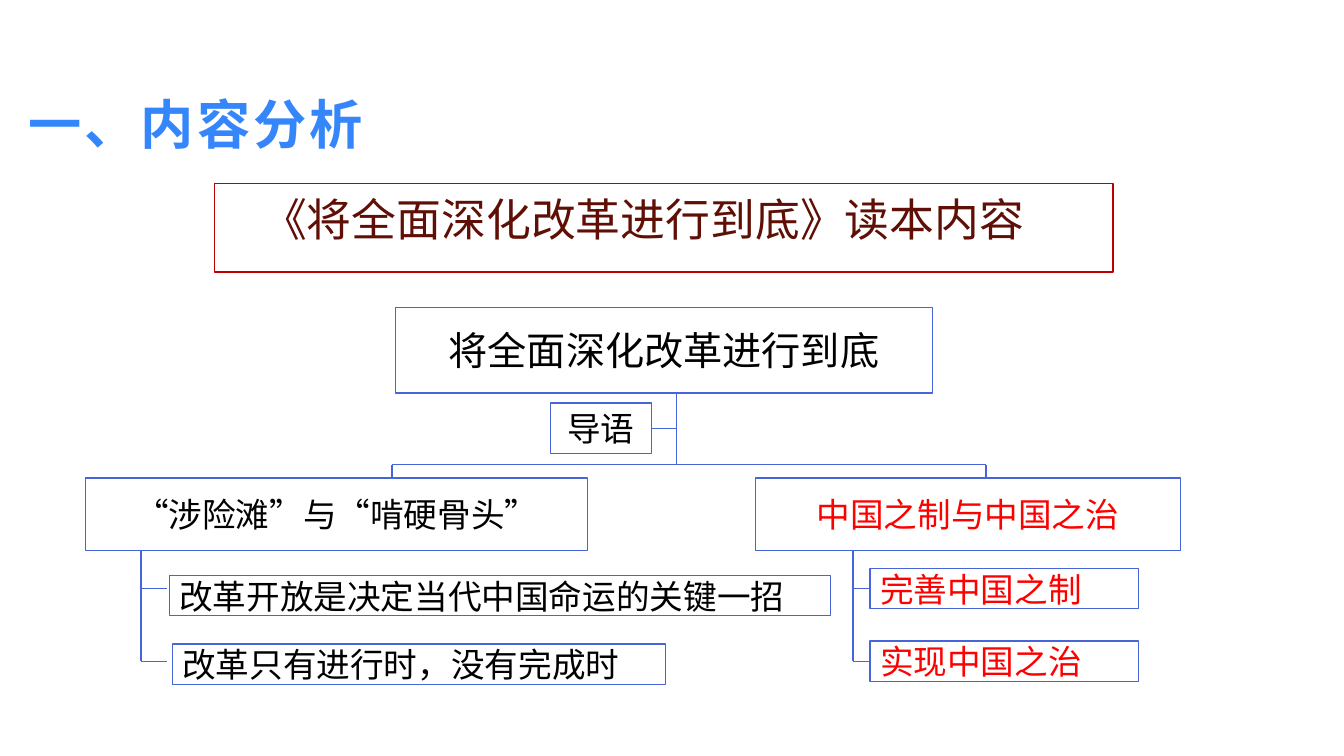
from lxml.etree import SubElement
from pptx import Presentation
from pptx.dml.color import RGBColor
from pptx.enum.shapes import MSO_CONNECTOR, MSO_SHAPE
from pptx.enum.text import MSO_ANCHOR, MSO_AUTO_SIZE, PP_ALIGN
from pptx.oxml.ns import qn
from pptx.util import Inches, Pt

FONT = "Noto Sans CJK SC"
COLORS = {
    "title": "3586FB",
    "banner_text": "5F0F05",
    "banner_line": "C00000",
    "line": "4765D8",
    "box": "FFFFFF",
    "text": "000000",
    "highlight": "FF0000",
}
CELL = Inches(0.1)
CHILD_HEIGHT = 4
TICK_ROWS = (58.4, 65.6)
FORK_ROW = 46.1
BRANCH_ROW = 47.4
BRANCH_HEIGHT = 7.2


def cells(*counts):
    return [round(count * CELL) for count in counts]


def color(name):
    return RGBColor.from_string(COLORS[name])


def write_text(shape, text, size, color_name, align, anchor):
    frame = shape.text_frame
    frame.word_wrap = True
    frame.auto_size = MSO_AUTO_SIZE.NONE
    frame.vertical_anchor = anchor
    frame.text = text
    paragraph = frame.paragraphs[0]
    paragraph.alignment = align
    font = paragraph.font
    font.size = Pt(size)
    font.name = FONT
    font.color.rgb = color(color_name)
    properties = paragraph._p.pPr.find(qn("a:defRPr"))
    SubElement(properties, qn("a:ea")).set("typeface", FONT)
    return font, properties


def add_title(slide, text):
    title = slide.shapes.title
    title.left, title.top, title.width, title.height = cells(2.1, 8, 63.7, 7.7)
    font, properties = write_text(title, text, 38, "title", PP_ALIGN.LEFT, MSO_ANCHOR.BOTTOM)
    font.bold = True
    properties.set("spc", "220")
    frame = title.text_frame
    frame.margin_left = frame.margin_right = Inches(0.07)
    frame.margin_top = frame.margin_bottom = Inches(0.03)


def add_box(slide, bounds, text, size=24, text_color="text", line_color="line",
            align=PP_ALIGN.CENTER, anchor=MSO_ANCHOR.MIDDLE):
    box = slide.shapes.add_shape(MSO_SHAPE.RECTANGLE, *cells(*bounds))
    box.shadow.inherit = False
    box.fill.solid()
    box.fill.fore_color.rgb = color("box")
    box.line.color.rgb = color(line_color)
    box.line.width = Pt(1)
    write_text(box, text, size, text_color, align, anchor)
    return box


def add_line(slide, *ends):
    line = slide.shapes.add_connector(MSO_CONNECTOR.STRAIGHT, *cells(*ends))
    line.line.color.rgb = color("line")
    line.line.width = Pt(1)
    SubElement(line._element.spPr, qn("a:effectLst"))


def add_banner(slide, text):
    banner = add_box(slide, (21.3, 18.2, 89.1, 8.8), text, 32, "banner_text",
                     "banner_line", PP_ALIGN.LEFT, MSO_ANCHOR.TOP)
    banner.text_frame.margin_left = Inches(0.47)
    banner.text_frame.margin_top = Inches(0.08)


def add_branch(slide, left, width, text, text_color, drop, trunk, tick_end, children):
    add_line(slide, drop, FORK_ROW, drop, BRANCH_ROW)
    add_box(slide, (left, BRANCH_ROW, width, BRANCH_HEIGHT), text, text_color=text_color)
    add_line(slide, trunk, BRANCH_ROW + BRANCH_HEIGHT, trunk, TICK_ROWS[-1])
    for tick_row, (child_left, child_top, child_width, child_text) in zip(TICK_ROWS, children):
        add_line(slide, trunk, tick_row, tick_end, tick_row)
        add_box(slide, (child_left, child_top, child_width, CHILD_HEIGHT), child_text,
                text_color=text_color, align=PP_ALIGN.LEFT)


def main():
    presentation = Presentation()
    presentation.slide_width = Inches(13.33)
    presentation.slide_height = Inches(7.5)
    slide = presentation.slides.add_slide(presentation.slide_layouts[5])

    add_title(slide, "一、内容分析")
    add_banner(slide, "《将全面深化改革进行到底》读本内容")

    add_box(slide, (39.2, 30.5, 53.3, 8.5), "将全面深化改革进行到底", 28)
    add_line(slide, 67.1, 39, 67.1, FORK_ROW)
    add_line(slide, 38.9, FORK_ROW, 97.8, FORK_ROW)
    add_box(slide, (54.6, 40, 10, 5), "导语")
    add_line(slide, 64.6, 42.5, 67.1, 42.5)

    add_branch(slide, 8.5, 49.8, "“涉险滩”与“啃硬骨头”", "text", 38.9, 14, 16.6, [
        (16.8, 57.1, 65.6, "改革开放是决定当代中国命运的关键一招"),
        (17.1, 63.9, 48.9, "改革只有进行时，没有完成时"),
    ])
    add_branch(slide, 74.9, 42.2, "中国之制与中国之治", "highlight", 97.8, 84.6, 86.3, [
        (86.3, 56.4, 26.6, "完善中国之制"),
        (86.3, 63.6, 26.6, "实现中国之治"),
    ])

    presentation.save("out.pptx")


if __name__ == "__main__":
    main()
